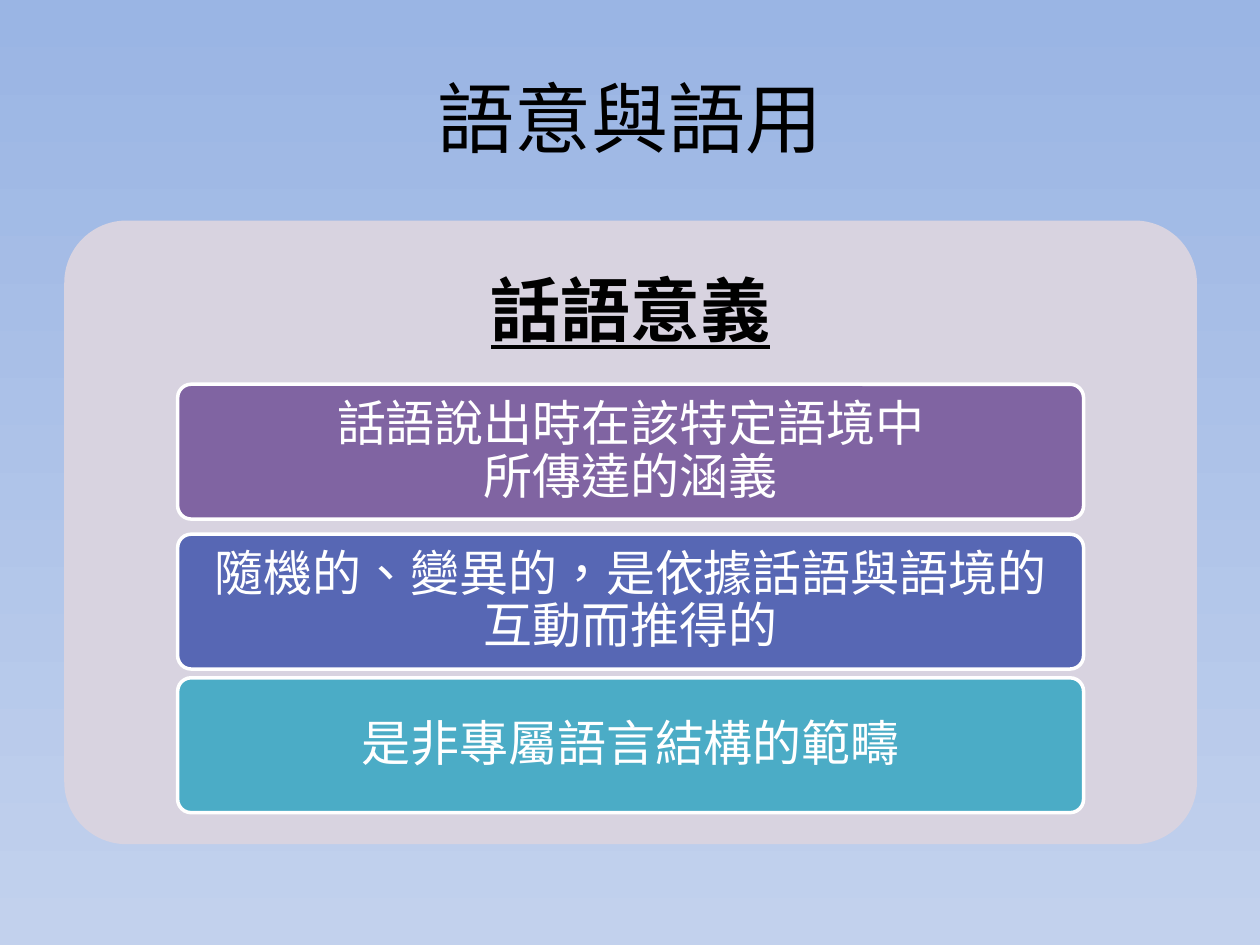
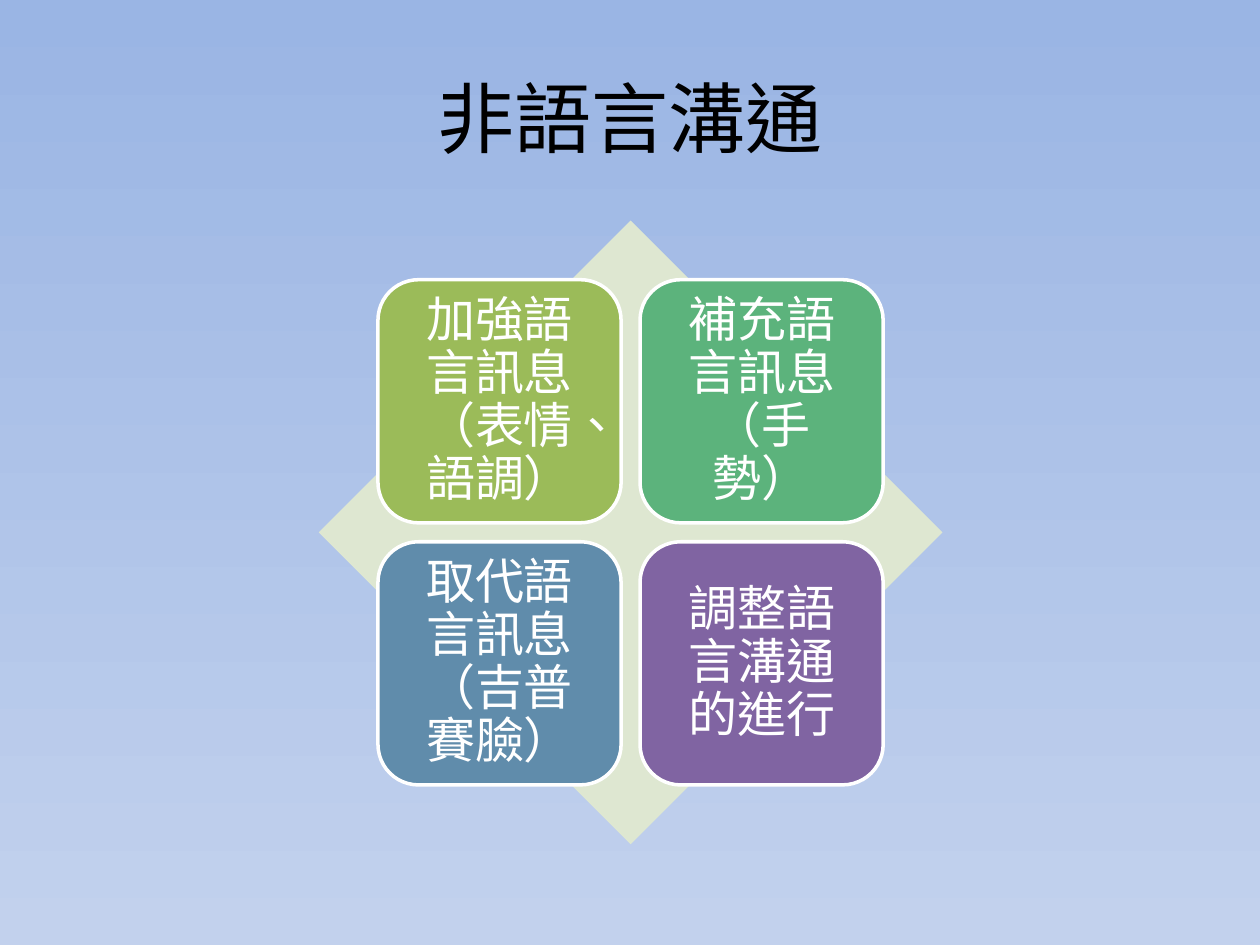
from pptx import Presentation
from pptx.dml.color import RGBColor
from pptx.enum.shapes import MSO_SHAPE as SHAPE
from pptx.enum.text import MSO_ANCHOR as ANCHOR, PP_ALIGN as ALIGN
from pptx.oxml.ns import qn
from pptx.util import Inches, Pt
from lxml.etree import SubElement

FONT = "Noto Sans CJK SC"
BLACK = RGBColor(0x00, 0x00, 0x00)
WHITE = RGBColor(0xFF, 0xFF, 0xFF)
SKY_TOP = RGBColor(0x9A, 0xB5, 0xE4)
SKY_BOTTOM = RGBColor(0xC2, 0xD1, 0xED)
LAVENDER = RGBColor(0xD8, 0xD3, 0xE0)
PALE_GREEN = RGBColor(0xDE, 0xE7, 0xD1)
PURPLE = RGBColor(0x80, 0x64, 0xA2)
INDIGO = RGBColor(0x57, 0x67, 0xB4)
TEAL = RGBColor(0x4B, 0xAC, 0xC6)
OLIVE = RGBColor(0x9B, 0xBB, 0x59)
GREEN = RGBColor(0x5C, 0xB3, 0x7C)
STEEL = RGBColor(0x60, 0x8C, 0xAB)

MEANING_TITLE = "語意與語用"
MEANING_HEADING = "話語意義"
MEANING_POINTS = [
    ("話語說出時在該特定語境中\n所傳達的涵義", PURPLE, 3.05),
    ("隨機的、變異的，是依據話語與語境的互動而推得的", INDIGO, 4.24),
    ("是非專屬語言結構的範疇", TEAL, 5.38),
]
NONVERBAL_TITLE = "非語言溝通"
NONVERBAL_ROLES = [
    ("加強語言訊息（表情、語調）", OLIVE),
    ("補充語言訊息（手勢）", GREEN),
    ("取代語言訊息（吉普賽臉）", STEEL),
    ("調整語言溝通的進行", PURPLE),
]

TITLE_FONT = {"size": Pt(44)}
HEADING_FONT = {"size": Pt(40), "bold": True, "underline": True}
POINT_FONT = {"size": Pt(28)}

PANEL = (0.51, 1.75, 8.99, 4.95)
HEADING = (0.51, 1.75, 8.99, 1.48)
DIAMOND = (2.53, 1.75, 4.95, 4.95)
BAR_LEFT, BAR_WIDTH, BAR_HEIGHT = 1.41, 7.19, 1.07
TILE_LEFT, TILE_TOP, TILE_SIZE, TILE_STEP = 3, 2.22, 1.93, 2.08


def write(shape, text, font, color, insets=None, spacing=None):
    frame = shape.text_frame
    frame.word_wrap = True
    frame.vertical_anchor = ANCHOR.MIDDLE
    if insets:
        for side, inset in zip(("left", "right", "top", "bottom"), insets):
            setattr(frame, f"margin_{side}", Inches(inset))
    paragraph = frame.paragraphs[0]
    paragraph.text = text
    paragraph.alignment = ALIGN.CENTER
    paragraph.line_spacing = spacing
    for run in paragraph.runs:
        for name, value in {"name": FONT, **font}.items():
            setattr(run.font, name, value)
        run.font.color.rgb = color
        properties = run._r.get_or_add_rPr()
        properties.set("lang", "zh-TW")
        SubElement(properties, qn("a:ea"), typeface=FONT)


def add_block(slide, kind, box, fill, corner=None, outlined=False):
    block = slide.shapes.add_shape(kind, *map(Inches, box))
    block.shadow.inherit = False
    block.fill.solid()
    block.fill.fore_color.rgb = fill
    if corner:
        block.adjustments[0] = corner
    if outlined:
        block.line.color.rgb = WHITE
        block.line.width = Pt(2)
    else:
        block.line.fill.background()
    return block


def add_card(slide, text, box, fill, insets, corner=None):
    card = add_block(slide, SHAPE.ROUNDED_RECTANGLE, box, fill, corner, outlined=True)
    write(card, text, POINT_FONT, WHITE, insets, 0.9)


def add_titled_slide(deck, text):
    slide = deck.slides.add_slide(deck.slide_layouts[5])
    title = slide.shapes.title
    title.left, title.top, title.width, title.height = map(Inches, (0.5, 0.3, 9, 1.25))
    write(title, text, TITLE_FONT, BLACK)
    return slide


def paint_background(deck):
    sky = deck.slide_master.background.fill
    sky.gradient()
    sky.gradient_angle = 270
    for stop, color, position in zip(sky.gradient_stops, (SKY_TOP, SKY_BOTTOM), (0, 1)):
        stop.color.rgb = color
        stop.position = position


def build_meaning(deck):
    slide = add_titled_slide(deck, MEANING_TITLE)
    add_block(slide, SHAPE.ROUNDED_RECTANGLE, PANEL, LAVENDER, corner=0.1)
    heading = slide.shapes.add_textbox(*map(Inches, HEADING))
    write(heading, MEANING_HEADING, HEADING_FONT, BLACK, (0.17,) * 4, 0.9)
    for text, fill, top in MEANING_POINTS:
        box = (BAR_LEFT, top, BAR_WIDTH, BAR_HEIGHT)
        add_card(slide, text, box, fill, (0.08, 0.08, 0.06, 0.06), corner=0.1)


def build_nonverbal(deck):
    slide = add_titled_slide(deck, NONVERBAL_TITLE)
    add_block(slide, SHAPE.DIAMOND, DIAMOND, PALE_GREEN)
    for index, (text, fill) in enumerate(NONVERBAL_ROLES):
        row, column = divmod(index, 2)
        box = (TILE_LEFT + column * TILE_STEP, TILE_TOP + row * TILE_STEP, TILE_SIZE, TILE_SIZE)
        add_card(slide, text, box, fill, (0.12,) * 4)


def main():
    deck = Presentation()
    deck.slide_width, deck.slide_height = Inches(10), Inches(7.5)
    paint_background(deck)
    build_meaning(deck)
    build_nonverbal(deck)
    deck.save("out.pptx")


if __name__ == "__main__":
    main()
